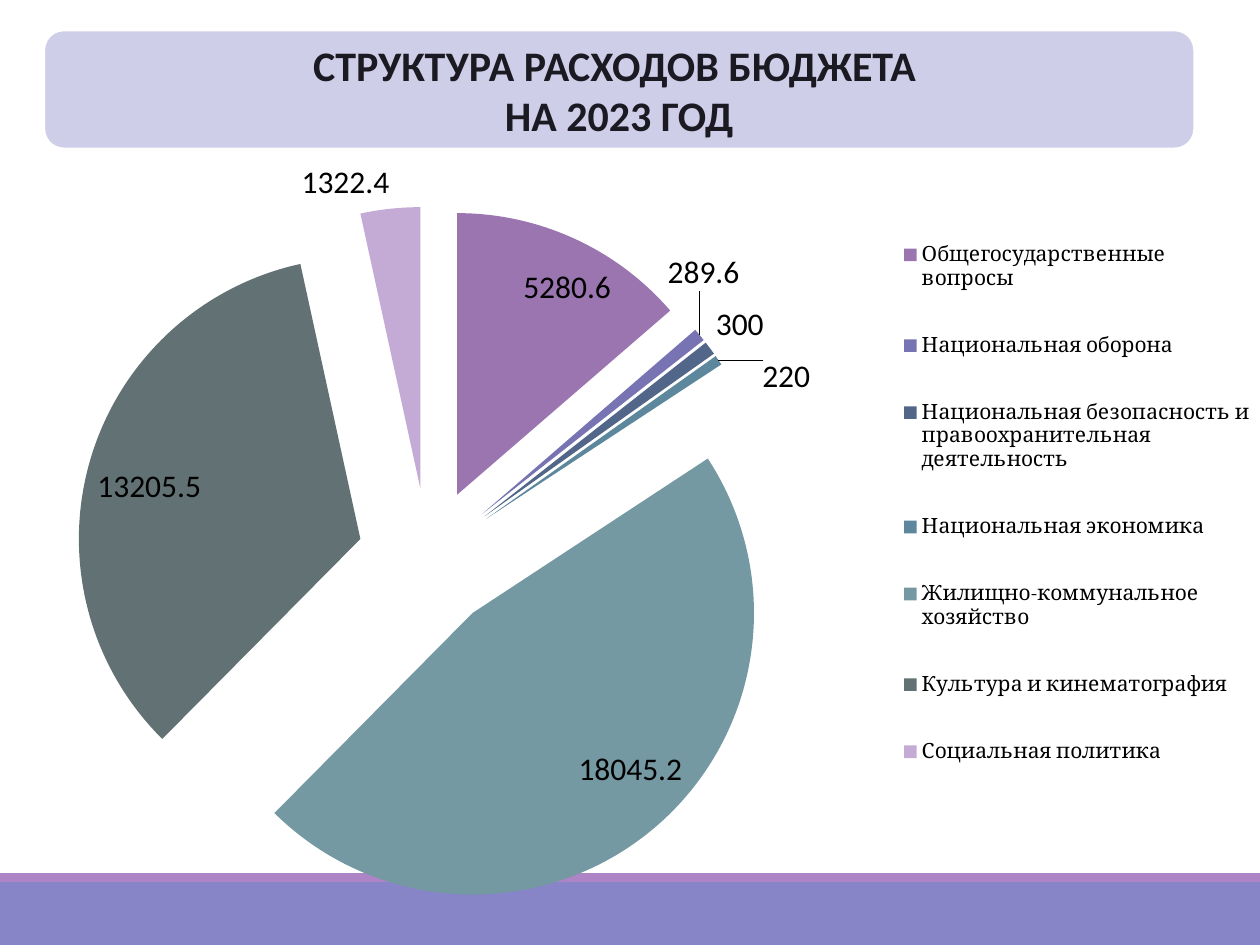
from lxml.etree import SubElement
from pptx import Presentation
from pptx.chart.data import CategoryChartData
from pptx.dml.color import RGBColor
from pptx.enum.chart import XL_CHART_TYPE as ChartType, XL_LABEL_POSITION as LabelPosition, XL_LEGEND_POSITION as LegendPosition
from pptx.enum.shapes import MSO_SHAPE as ShapeType
from pptx.enum.text import MSO_ANCHOR as Anchor, PP_ALIGN as Align
from pptx.oxml import parse_xml
from pptx.oxml.ns import nsdecls, qn
from pptx.util import Inches, Pt

COLORS = {
    "title_box": "CFCEE9", "title_text": "1B1A22", "white": "FFFFFF",
    "black": "000000", "strip": "AD84C6", "footer": "8784C7",
}
EXPENSES = [
    ("Общегосударственные вопросы", 5280.6, "9B75B0"),
    ("Национальная оборона", 289.6, "7874B3"),
    ("Национальная безопасность и правоохранительная деятельность", 300, "52668A"),
    ("Национальная экономика", 220, "5D879C"),
    ("Жилищно-коммунальное хозяйство", 18045.2, "7599A2"),
    ("Культура и кинематография", 13205.5, "627274"),
    ("Социальная политика", 1322.4, "C4ABD6"),
]
MOVED_LABELS = {1: (-0.03, -0.05), 3: (0.03, 0.05)}


def rgb(name):
    """Return the colour with the given name."""
    return RGBColor.from_string(COLORS[name])


def set_font(font, name, size, color):
    """Set the typeface, size and colour of a font."""
    font.name = name
    font.size = Pt(size)
    font.color.rgb = rgb(color)


def set_layout(parent, index, **values):
    """Give a chart element a manual layout, in fractions of the chart."""
    for old in parent.findall(qn("c:layout")):
        parent.remove(old)
    layout = parse_xml(f"<c:layout {nsdecls('c')}><c:manualLayout/></c:layout>")
    for tag, value in values.items():
        SubElement(layout[0], qn(f"c:{tag}")).set("val", str(value))
    parent.insert(index, layout)


def add_box(slide, shape_type, left, top, width, height, color):
    """Draw a filled shape without outline or shadow."""
    box = slide.shapes.add_shape(shape_type, left, top, width, height)
    box.shadow.inherit = False
    box.fill.solid()
    box.fill.fore_color.rgb = rgb(color)
    box.line.fill.background()
    return box


def add_footer(slide, left, top, width, height):
    """Draw the footer band with a thin strip along its top."""
    strip = Inches(0.07)
    add_box(slide, ShapeType.RECTANGLE, left, top + strip, width, height - strip, "footer")
    add_box(slide, ShapeType.RECTANGLE, left, top, width, strip, "strip")


def format_labels(series):
    """Show the values and shift the labels of the thinnest slices."""
    labels = series.data_labels
    labels.show_value = True
    labels.show_percentage = False
    labels.position = LabelPosition.BEST_FIT
    set_font(labels.font, "Calibri", 18, "black")
    for index in MOVED_LABELS:
        label = series.points[index].data_label
        label.position = LabelPosition.BEST_FIT
        set_font(label.font, "Calibri", 18, "black")
    for element in series._element.iter(qn("c:dLbl")):
        x, y = MOVED_LABELS[int(element.find(qn("c:idx")).get("val"))]
        set_layout(element, 1, x=x, y=y)


def add_expense_chart(slide, left, top, width, height):
    """Draw the exploded pie of expenses with its legend."""
    data = CategoryChartData()
    data.categories = [name for name, _, _ in EXPENSES]
    data.add_series("Series 1", [value for _, value, _ in EXPENSES])
    frame = slide.shapes.add_chart(ChartType.PIE_EXPLODED, left, top, width, height, data)
    chart = frame.chart
    chart.has_title = False
    set_font(chart.font, "Calibri", 18, "black")
    chart_space = chart._chartSpace
    background = parse_xml(
        f"<c:spPr {nsdecls('c', 'a')}><a:noFill/><a:ln><a:noFill/></a:ln></c:spPr>"
    )
    chart_space.find(qn("c:txPr")).addprevious(background)

    plot = chart.plots[0]
    plot.vary_by_categories = True
    series = plot.series[0]
    for explosion in series._element.findall(qn("c:explosion")):
        explosion.set("val", "25")
    for index, (_, _, color) in enumerate(EXPENSES):
        point = series.points[index]
        point.format.fill.solid()
        point.format.fill.fore_color.rgb = RGBColor.from_string(color)
        point.format.line.fill.background()
    format_labels(series)
    set_layout(chart_space.chart.plotArea, 0, layoutTarget="inner", xMode="edge",
               yMode="edge", x=0.056, y=0.079, w=0.562, h=0.898)

    chart.has_legend = True
    legend = chart.legend
    legend.position = LegendPosition.RIGHT
    legend.include_in_layout = False
    set_font(legend.font, "Cambria", 12, "black")
    set_layout(legend._element, 1, xMode="edge", yMode="edge",
               x=0.716, y=0.07, w=0.284, h=0.775)


def add_title(slide, left, top, width, height):
    """Place the title on a rounded box in front of the chart."""
    box = add_box(slide, ShapeType.ROUNDED_RECTANGLE, left, top, width, height, "title_box")
    box.line.color.rgb = rgb("white")
    box.line.width = Pt(1.25)
    title = slide.shapes.title
    title.left, title.top, title.width, title.height = left, top, width, height
    frame = title.text_frame
    frame.word_wrap = True
    frame.vertical_anchor = Anchor.MIDDLE
    for index, line in enumerate(["СТРУКТУРА РАСХОДОВ БЮДЖЕТА ", "НА 2023 ГОД"]):
        paragraph = frame.add_paragraph() if index else frame.paragraphs[0]
        paragraph.alignment = Align.CENTER
        paragraph.space_before = Pt(0)
        run = paragraph.add_run()
        run.text = line
        run.font.bold = True
        set_font(run.font, "Calibri", 24, "title_text")
    slide.shapes._spTree.append(title._element)


def main():
    """Build and save the budget slide."""
    presentation = Presentation()
    presentation.slide_width = Inches(10)
    presentation.slide_height = Inches(7.5)
    slide = presentation.slides.add_slide(presentation.slide_layouts[5])
    add_footer(slide, 0, Inches(6.93), Inches(10), Inches(0.57))
    add_expense_chart(slide, Inches(0.04), Inches(1.15), Inches(9.96), Inches(6.22))
    add_title(slide, Inches(0.35), Inches(0.24), Inches(9.13), Inches(0.94))
    presentation.save("out.pptx")


if __name__ == "__main__":
    main()
